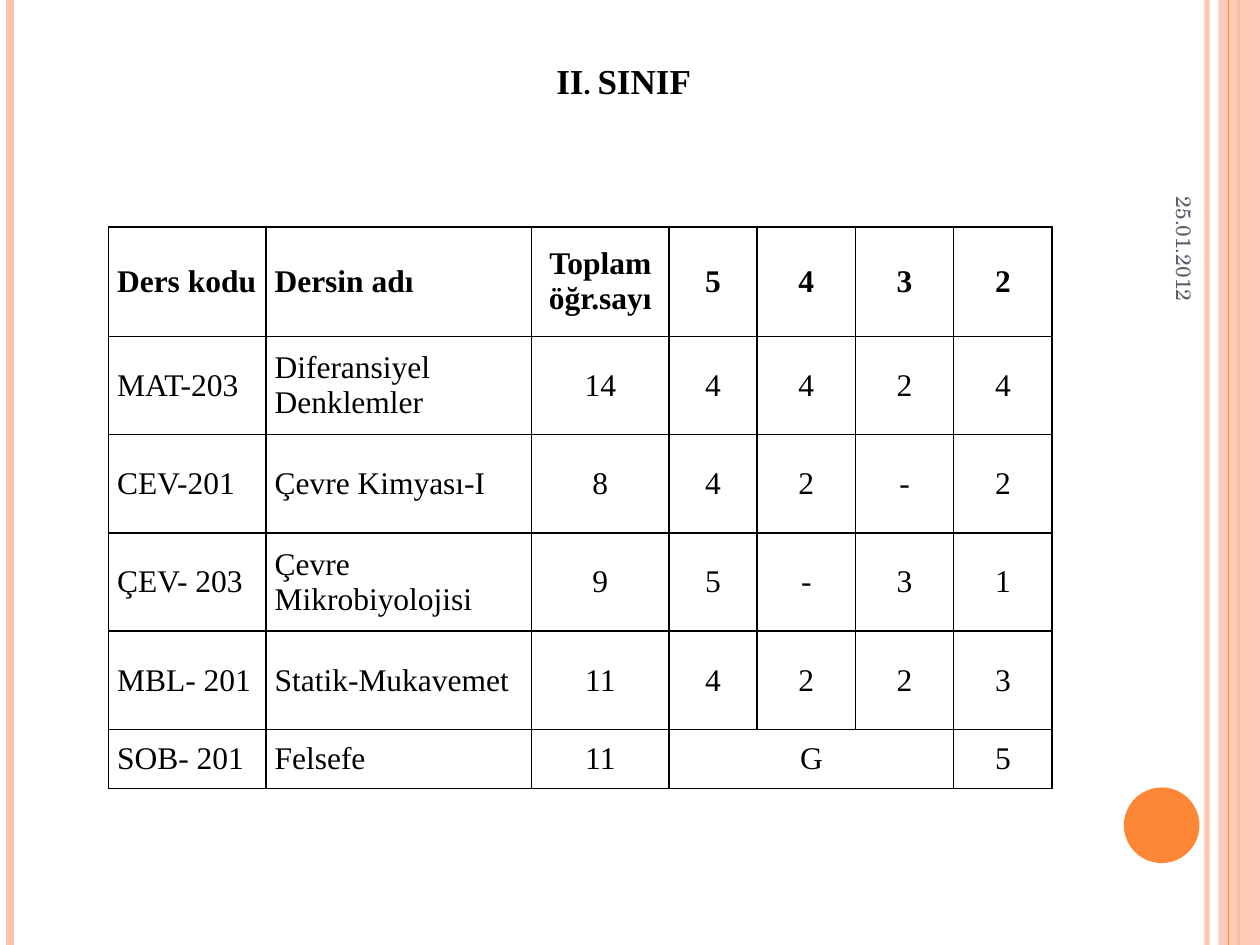
import dataclasses

import pptx
import pptx.dml.color
import pptx.enum.shapes
import pptx.enum.text
import pptx.oxml.ns
import pptx.util
from lxml import etree

Inches = pptx.util.Inches
Pt = pptx.util.Pt
Align = pptx.enum.text.PP_ALIGN
Anchor = pptx.enum.text.MSO_ANCHOR
Shape = pptx.enum.shapes.MSO_SHAPE


@dataclasses.dataclass(frozen=True)
class Theme:
    """Colours, fonts and type sizes of the slide."""

    ink: str = "000000"
    slate: str = "575F6D"
    peach: str = "FEC3AE"
    orange: str = "FE8637"
    serif: str = "Times New Roman"
    school: str = "TeX Gyre Schola"
    head: int = 20
    body: int = 18
    date: int = 12


THEME = Theme()

COLS = [1.25, 2.11, 1.09, 0.7, 0.78, 0.78, 0.78]
TALLS = [0.87, 0.78, 0.78, 0.78, 0.78, 0.47]
ROWS = [
    ["Ders kodu", "Dersin adı", "Toplam öğr.sayı", "5", "4", "3", "2"],
    ["MAT-203", "Diferansiyel Denklemler", "14", "4", "4", "2", "4"],
    ["CEV-201", "Çevre Kimyası-I", "8", "4", "2", "-", "2"],
    ["ÇEV- 203", "Çevre Mikrobiyolojisi", "9", "5", "-", "3", "1"],
    ["МВL- 201", "Statik-Mukavemet", "11", "4", "2", "2", "3"],
    ["SOB- 201", "Felsefe", "11", "G", "", "", "5"],
]


def rgb(code):
    """Turn a hex code into a colour."""
    return pptx.dml.color.RGBColor.from_string(code)


def add_node(parent, tag, **attrs):
    """Append a drawing element with the given attributes."""
    return etree.SubElement(parent, pptx.oxml.ns.qn(tag), attrs)


def fade(fill, share):
    """Set the opacity of a solid fill in percent."""
    node = fill._xPr.find(".//" + pptx.oxml.ns.qn("a:srgbClr"))
    add_node(node, "a:alpha", val=str(share * 1000))


def style(para, face, size, tint, bold=False, align=Align.LEFT):
    """Set the font and alignment of a paragraph."""
    para.alignment = align
    para.font.name = face
    para.font.size = Pt(size)
    para.font.bold = bold
    para.font.color.rgb = rgb(tint)


def add_rule(slide, left, top, tall, tint, width, share=100):
    """Draw an upright line."""
    x, y = Inches(left), Inches(top)
    kind = pptx.enum.shapes.MSO_CONNECTOR.STRAIGHT
    rule = slide.shapes.add_connector(kind, x, y, x, y + Inches(tall))
    rule.line.color.rgb = rgb(tint)
    rule.line.width = Pt(width)
    if share < 100:
        fade(rule.line.fill, share)
    add_node(rule._element.spPr, "a:effectLst")


def add_solid(slide, kind, box, tint, share=100):
    """Draw a filled shape without an outline."""
    shape = slide.shapes.add_shape(kind, *map(Inches, box))
    shape.shadow.inherit = False
    shape.fill.solid()
    shape.fill.fore_color.rgb = rgb(tint)
    shape.line.fill.background()
    if share < 100:
        fade(shape.fill, share)


def add_frame(slide, box):
    """Draw the side stripes and the disc."""
    left, top, wide, tall = box
    right = left + wide
    add_rule(slide, right - 0.42, top, tall, THEME.peach, 3, 93)
    add_rule(slide, left + 0.08, top, tall, THEME.peach, 4.5)
    add_rule(slide, right - 0.17, top, tall, THEME.orange, 1.5)
    band = (right - 0.33, top, 0.33, tall)
    add_solid(slide, Shape.RECTANGLE, band, THEME.peach, 87)
    add_rule(slide, right - 0.25, top, tall, THEME.orange, 0.75)
    disc = (right - 1.08, top + tall - 1.25, 0.6, 0.6)
    add_solid(slide, Shape.OVAL, disc, THEME.orange)


def set_title(slide, box):
    """Place and format the title."""
    title = slide.shapes.title
    title.left, title.top, title.width, title.height = map(Inches, box)
    frame = title.text_frame
    frame.auto_size = pptx.enum.text.MSO_AUTO_SIZE.NONE
    frame.vertical_anchor = Anchor.BOTTOM
    frame.margin_left = Inches(0.83)
    frame.text = "II. SINIF"
    para = frame.paragraphs[0]
    style(para, THEME.serif, THEME.head, THEME.ink, True, Align.CENTER)
    para.runs[0]._r.get_or_add_rPr().set("cap", "small")


def add_date(slide, box):
    """Place the date, turned to read downwards."""
    date = slide.shapes.add_textbox(*map(Inches, box))
    date.rotation = 90
    frame = date.text_frame
    frame.word_wrap = True
    frame.vertical_anchor = Anchor.MIDDLE
    frame.text = "25.01.2012"
    style(frame.paragraphs[0], THEME.school, THEME.date, THEME.slate, align=Align.RIGHT)


def add_edges(cell):
    """Rule all four sides of a cell."""
    props = cell._tc.get_or_add_tcPr()
    for side in ("a:lnL", "a:lnR", "a:lnT", "a:lnB"):
        line = add_node(props, side, w=str(Pt(1)))
        add_node(add_node(line, "a:solidFill"), "a:srgbClr", val=THEME.ink)


def fill_cell(cell, text, bold, align):
    """Write and format one cell."""
    cell.margin_left = cell.margin_right = Inches(0.07)
    cell.margin_top = cell.margin_bottom = 0
    cell.vertical_anchor = Anchor.MIDDLE
    add_edges(cell)
    cell.fill.background()
    cell.text = text
    style(cell.text_frame.paragraphs[0], THEME.serif, THEME.body, THEME.ink, bold, align)


def add_grades(slide, box):
    """Build the table of courses and grades."""
    shape = slide.shapes.add_table(len(ROWS), len(COLS), *map(Inches, box))
    table = shape.table
    table.first_row = table.horz_banding = False
    for col, wide in zip(table.columns, COLS):
        col.width = Inches(wide)
    for row, tall in zip(table.rows, TALLS):
        row.height = Inches(tall)
    for r, row in enumerate(ROWS):
        for c, text in enumerate(row):
            align = Align.LEFT if c < 2 else Align.CENTER
            fill_cell(table.cell(r, c), text, r == 0, align)
    table.cell(5, 3).merge(table.cell(5, 5))


def main():
    """Build and save the slide."""
    deck = pptx.Presentation()
    deck.slide_width, deck.slide_height = Inches(10), Inches(7.5)
    slide = deck.slides.add_slide(deck.slide_layouts[5])
    add_frame(slide, (0, 0, 10, 7.5))
    add_grades(slide, (0.86, 1.8, sum(COLS), sum(TALLS)))
    set_title(slide, (0.5, 0.3, 8.17, 0.56))
    add_date(slide, (8.3, 1.18, 2.2, 0.42))
    deck.save("out.pptx")


if __name__ == "__main__":
    main()
